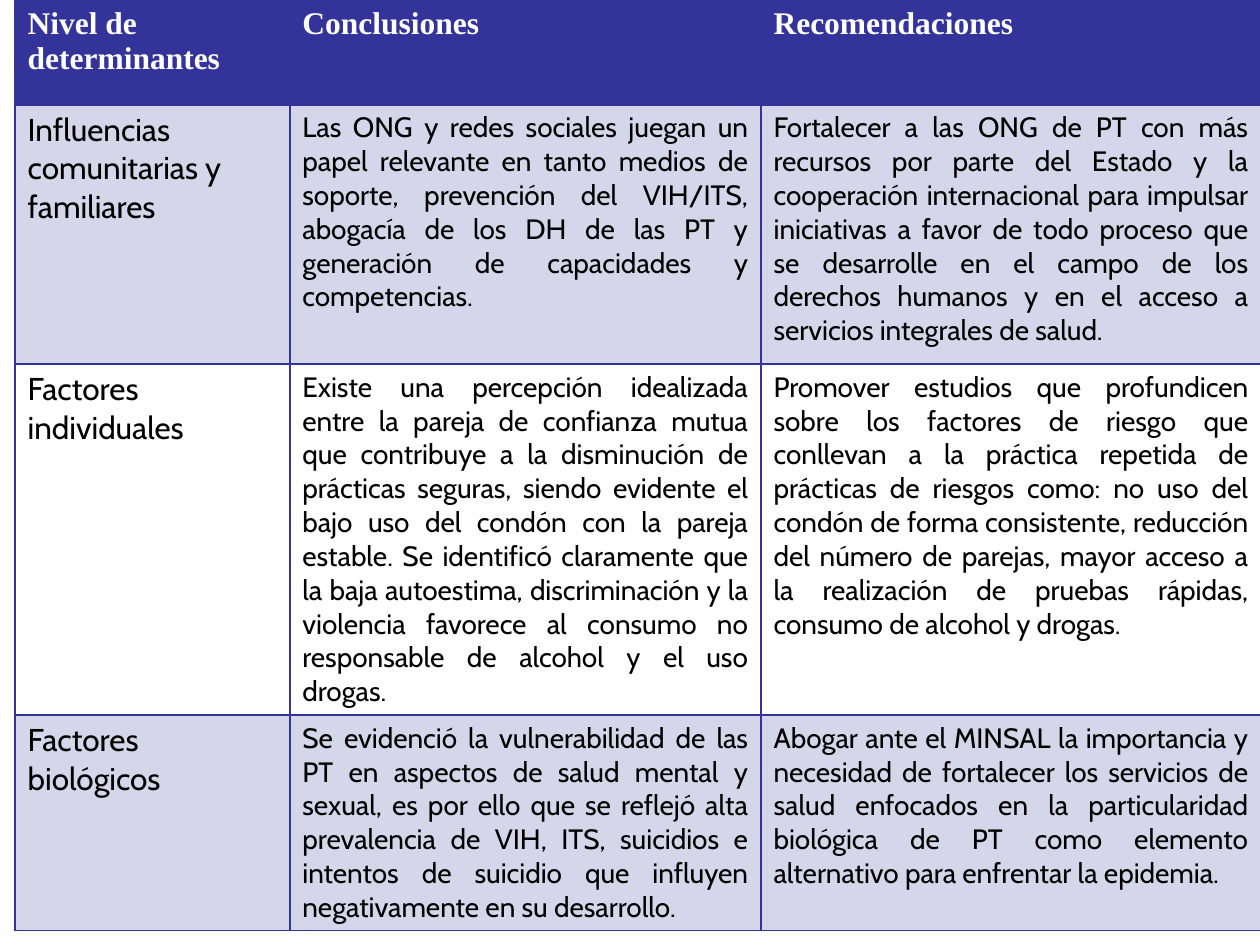
from dataclasses import dataclass

from lxml import etree
from pptx import Presentation, util as u
from pptx.dml.color import RGBColor
from pptx.enum import text
from pptx.oxml import ns


@dataclass(frozen=True)
class Theme:
    accent: str = "333399"
    light: str = "FFFFFF"
    dark: str = "000000"
    band_opacity: int = 20
    heading_font: str = "Times New Roman"
    body_font: str = "Cabin"
    label_size: int = 18
    body_size: int = 16
    line: float = 1
    header_line: float = 2


THEME = Theme()
PAGE_WIDTH, PAGE_HEIGHT = 10, 7.5
COLUMNS = (2.18, 3.74, 3.97)
ROWS = (0.83, 2.06, 2.78, 1.71)

HEADER = ("Nivel de determinantes", "Conclusiones", "Recomendaciones")
FINDINGS = (
    ("Influencias comunitarias y familiares",
     "Las ONG y redes sociales juegan un papel relevante en tanto medios de "
     "soporte, prevención del VIH/ITS, abogacía de los DH de las PT y "
     "generación de capacidades y competencias.",
     "Fortalecer a las ONG de PT con más recursos por parte del Estado y la "
     "cooperación internacional para impulsar iniciativas a favor de todo "
     "proceso que se desarrolle en el campo de los derechos humanos y en el "
     "acceso a servicios integrales de salud."),
    ("Factores individuales",
     "Existe una percepción idealizada entre la pareja de confianza mutua que "
     "contribuye a la disminución de prácticas seguras, siendo evidente el "
     "bajo uso del condón con la pareja estable. Se identificó claramente que "
     "la baja autoestima, discriminación y la violencia favorece al consumo "
     "no responsable de alcohol y el uso drogas.",
     "Promover estudios que profundicen sobre los factores de riesgo que "
     "conllevan a la práctica repetida de prácticas de riesgos como: no uso "
     "del condón de forma consistente, reducción del número de parejas, mayor "
     "acceso a la realización de pruebas rápidas, consumo de alcohol y drogas."),
    ("Factores biológicos",
     "Se evidenció la vulnerabilidad de las PT en aspectos de salud mental y "
     "sexual, es por ello que se reflejó alta prevalencia de VIH, ITS, "
     "suicidios e intentos de suicidio que influyen negativamente en su "
     "desarrollo.",
     "Abogar ante el MINSAL la importancia y necesidad de fortalecer los "
     "servicios de salud enfocados en la particularidad biológica de PT como "
     "elemento alternativo para enfrentar la epidemia."),
)


def add_borders(cell, widths):
    """Draw the left, right, top and bottom lines, ahead of the cell's fill."""
    properties = cell._tc.get_or_add_tcPr()
    for index, (side, width) in enumerate(zip("LRTB", widths)):
        line = etree.Element(ns.qn(f"a:ln{side}"), w=str(u.Pt(width)))
        fill = etree.SubElement(line, ns.qn("a:solidFill"))
        etree.SubElement(fill, ns.qn("a:srgbClr"), val=THEME.accent)
        properties.insert(index, line)


def fill_cell(cell, color, opacity=100):
    cell.fill.solid()
    cell.fill.fore_color.rgb = RGBColor.from_string(color)
    if opacity < 100:
        tint = cell._tc.tcPr.find(".//" + ns.qn("a:srgbClr"))
        etree.SubElement(tint, ns.qn("a:alpha"), val=str(opacity * 1000))


def write_cell(cell, words, font, size, color, bold=False, justified=False):
    cell.text = words
    para = cell.text_frame.paragraphs[0]
    para.alignment = text.PP_ALIGN.JUSTIFY if justified else text.PP_ALIGN.LEFT
    para.font.name, para.font.size, para.font.bold = font, u.Pt(size), bold
    para.font.color.rgb = RGBColor.from_string(color)


def format_header(cell, words):
    write_cell(cell, words, THEME.heading_font, THEME.label_size, THEME.light, bold=True)
    fill_cell(cell, THEME.accent)
    add_borders(cell, (THEME.line,) * 3 + (THEME.header_line,))


def format_finding(cell, words, row, column):
    size = THEME.body_size if column else THEME.label_size
    write_cell(cell, words, THEME.body_font, size, THEME.dark, justified=column > 0)
    if row % 2:
        fill_cell(cell, THEME.accent, THEME.band_opacity)
    else:
        cell.fill.background()
    top = THEME.header_line if row == 1 else THEME.line
    add_borders(cell, (THEME.line, THEME.line, top, THEME.line))


def add_findings_table(page, left, top, width, height):
    frame = page.shapes.add_table(len(ROWS), len(COLUMNS), left, top, width, height)
    table = frame.table
    # Share the box out over the columns and rows
    for column, share in zip(table.columns, COLUMNS):
        column.width = int(width * share / sum(COLUMNS))
    for row, share in zip(table.rows, ROWS):
        row.height = int(height * share / sum(ROWS))
    # Header row, then banded findings
    for column, words in enumerate(HEADER):
        format_header(table.cell(0, column), words)
    for row, finding in enumerate(FINDINGS, 1):
        for column, words in enumerate(finding):
            format_finding(table.cell(row, column), words, row, column)


def main():
    deck = Presentation()
    deck.slide_width, deck.slide_height = u.Inches(PAGE_WIDTH), u.Inches(PAGE_HEIGHT)
    page = deck.slides.add_slide(deck.slide_layouts[6])
    # The table reaches the right edge of the page
    add_findings_table(page, u.Inches(0.12), 0,
                       u.Inches(sum(COLUMNS)), u.Inches(sum(ROWS)))
    deck.save("out.pptx")


if __name__ == "__main__":
    main()
